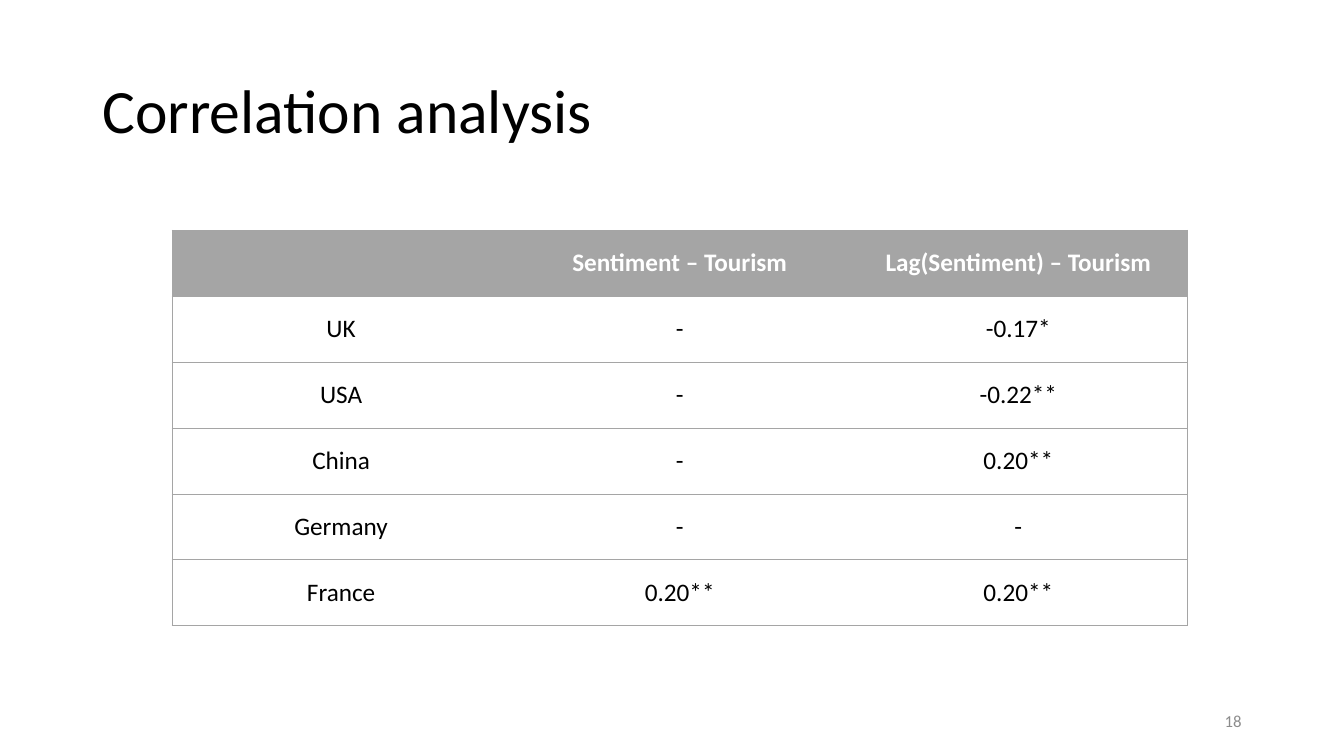
from dataclasses import dataclass

from lxml import etree
from pptx import Presentation
from pptx import util as u
from pptx.dml.color import RGBColor
from pptx.enum import text
from pptx.oxml.ns import qn


@dataclass(frozen=True)
class Theme:
    """Colours and type sizes of the slide."""

    font: str = "Calibri"
    ink: str = "000000"
    white: str = "FFFFFF"
    grey: str = "A5A5A5"
    page: str = "8C8C8C"
    title_size: int = 44
    table_size: int = 18
    page_size: int = 12
    border: float = 0.5


THEME = Theme()
CORRELATIONS = [
    ("", "Sentiment – Tourism", "Lag(Sentiment) – Tourism"),
    ("UK", "-", "-0.17*"),
    ("USA", "-", "-0.22**"),
    ("China", "-", "0.20**"),
    ("Germany", "-", "-"),
    ("France", "0.20**", "0.20**"),
]


def write(frame, words, size=THEME.table_size, color=THEME.ink, bold=False,
          align=text.PP_ALIGN.LEFT, spacing=1.0):
    """Write one formatted paragraph into a text frame."""
    frame.word_wrap = True
    paragraph = frame.paragraphs[0]
    paragraph.alignment = align
    paragraph.line_spacing = spacing
    run = paragraph.add_run()
    run.text = words
    run.font.name = THEME.font
    run.font.size = u.Pt(size)
    run.font.bold = bold
    run.font.color.rgb = RGBColor.from_string(color)


def set_border(cell, side, visible):
    """Draw or hide the border on one side of a cell."""
    properties = cell._tc.get_or_add_tcPr()
    line = etree.SubElement(properties, qn(f"a:ln{side}"), w=str(u.Pt(THEME.border)))
    if visible:
        fill = etree.SubElement(line, qn("a:solidFill"))
        etree.SubElement(fill, qn("a:srgbClr"), val=THEME.grey)
    else:
        etree.SubElement(line, qn("a:noFill"))


def add_title(slide, words, left, top, width, height):
    """Place the title placeholder in its box."""
    title = slide.shapes.title
    title.left, title.top, title.width, title.height = left, top, width, height
    title.text_frame.vertical_anchor = text.MSO_ANCHOR.MIDDLE
    write(title.text_frame, words, size=THEME.title_size, spacing=0.9)


def add_correlation_table(slide, rows, left, top, width, height):
    """Fill a box with a table that has a grey header and ruled rows."""
    last = len(rows[0]) - 1
    table = slide.shapes.add_table(len(rows), last + 1, left, top, width, height).table
    table.horz_banding = False
    for row, values in enumerate(rows):
        header = row == 0
        for column, value in enumerate(values):
            cell = table.cell(row, column)
            cell.vertical_anchor = text.MSO_ANCHOR.MIDDLE
            borders = {"L": column == 0, "R": column == last, "T": True, "B": True}
            for side, visible in borders.items():
                set_border(cell, side, visible)
            if header:
                cell.fill.solid()
                cell.fill.fore_color.rgb = RGBColor.from_string(THEME.grey)
            else:
                cell.fill.background()
            if value:
                write(cell.text_frame, value, bold=header,
                      color=THEME.white if header else THEME.ink,
                      align=text.PP_ALIGN.CENTER)


def add_page_number(slide, number, left, top, width, height):
    """Write the page number at the right of its box."""
    frame = slide.shapes.add_textbox(left, top, width, height).text_frame
    frame.vertical_anchor = text.MSO_ANCHOR.MIDDLE
    write(frame, number, size=THEME.page_size, color=THEME.page,
          align=text.PP_ALIGN.RIGHT)


def main():
    """Build the slide and save it."""
    presentation = Presentation()
    presentation.slide_width, presentation.slide_height = u.Cm(33.87), u.Cm(19.05)
    slide = presentation.slides.add_slide(presentation.slide_layouts[5])
    add_title(slide, "Correlation analysis",
              u.Cm(2.33), u.Cm(1.01), u.Cm(29.21), u.Cm(3.68))
    add_correlation_table(slide, CORRELATIONS,
                          u.Cm(4.33), u.Cm(5.8), u.Cm(25.6), u.Cm(9.97))
    add_page_number(slide, "18", u.Cm(23.92), u.Cm(17.66), u.Cm(7.62), u.Cm(1.01))
    presentation.save("out.pptx")


if __name__ == "__main__":
    main()
